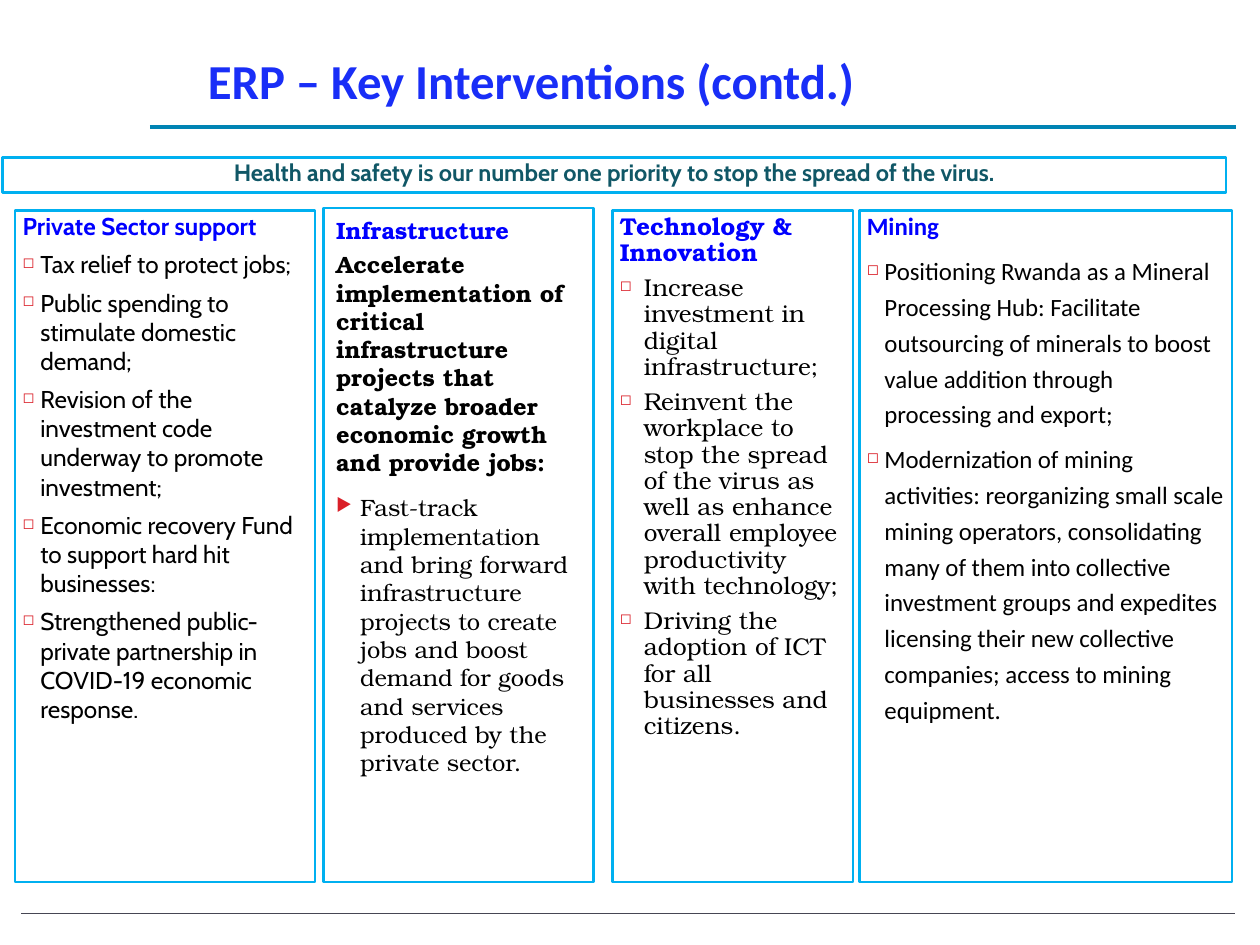
from lxml import etree
from pptx import Presentation
from pptx.dml.color import RGBColor
from pptx.enum.shapes import MSO_CONNECTOR, MSO_SHAPE
from pptx.enum.text import MSO_ANCHOR, PP_ALIGN
from pptx.oxml.ns import qn
from pptx.util import Pt

WHITE = RGBColor(0xFF, 0xFF, 0xFF)
BLACK = RGBColor(0x00, 0x00, 0x00)
GREY = RGBColor(0x46, 0x46, 0x53)
TEAL = RGBColor(0x00, 0x84, 0xB4)
DARK_TEAL = RGBColor(0x10, 0x57, 0x66)
SKY = RGBColor(0x00, 0xB0, 0xF0)
BLUE = RGBColor(0x00, 0x00, 0xFF)
TITLE_BLUE = RGBColor(0x19, 0x2E, 0xF7)
RED = RGBColor(0xDA, 0x1F, 0x28)

TOP, BOTTOM = 120.25, 504
SQUARE = ("◻", 60)
ARROW = ("▶", 76)


def set_values(target, values):
    for name, value in values.items():
        setattr(target, name, value)


def add_rule(s, x1, x2, y, color, width):
    line = s.shapes.add_connector(MSO_CONNECTOR.STRAIGHT, Pt(x1), Pt(y), Pt(x2), Pt(y))
    line.line.color.rgb = color
    line.line.width = Pt(width)
    etree.SubElement(line._element.spPr, qn("a:effectLst"))


def add_bullet(p, bullet, indent):
    char, percent = bullet
    pPr = p._p.get_or_add_pPr()
    pPr.set("marL", str(Pt(indent)))
    pPr.set("indent", str(-Pt(indent)))
    color = etree.SubElement(pPr, qn("a:buClr"))
    etree.SubElement(color, qn("a:srgbClr"), val=str(RED))
    etree.SubElement(pPr, qn("a:buSzPct"), val=str(percent * 1000))
    etree.SubElement(pPr, qn("a:buChar"), char=char)


def add_text(tf, index, text, font, para=None, bullet=None, indent=0):
    p = tf.add_paragraph() if index else tf.paragraphs[0]
    if bullet:
        add_bullet(p, bullet, indent)
    set_values(p, {"alignment": PP_ALIGN.LEFT, **(para or {})})
    r = p.add_run()
    r.text = text
    set_values(r.font, {k: v for k, v in font.items() if k != "color"})
    r.font.color.rgb = font["color"]


def set_frame(tf, left, top):
    set_values(tf, {"word_wrap": True, "vertical_anchor": MSO_ANCHOR.TOP,
                    "margin_left": Pt(left), "margin_right": Pt(left),
                    "margin_top": Pt(top), "margin_bottom": Pt(top)})


def add_box(s, x, y, w, h, insets=(4.32, 2.16)):
    sp = s.shapes.add_shape(MSO_SHAPE.RECTANGLE, Pt(x), Pt(y), Pt(w), Pt(h))
    sp.shadow.inherit = False
    sp.fill.solid()
    sp.fill.fore_color.rgb = WHITE
    sp.line.color.rgb = SKY
    sp.line.width = Pt(1.5)
    set_frame(sp.text_frame, *insets)
    return sp.text_frame


def add_column(s, x, w, font_name, size, heading, items, indent, spacing):
    tf = add_box(s, x, TOP, w, BOTTOM - TOP)
    font = {"name": font_name, "size": Pt(size), "bold": True, "color": BLUE}
    add_text(tf, 0, heading, font, {"line_spacing": 0.9})
    body = {**font, "bold": False, "color": BLACK}
    for i, item in enumerate(items, 1):
        add_text(tf, i, item, body,
                 {"line_spacing": spacing, "space_before": Pt(5.2)}, SQUARE, indent)


def add_infrastructure(s):
    tf = add_box(s, 185.04, 118.8, 154.08, BOTTOM - 118.8, (7.2, 4.5))
    font = {"name": "TeX Gyre Bonum", "size": Pt(13.5), "bold": True, "color": BLUE}
    add_text(tf, 0, "Infrastructure", font)
    add_text(tf, 1, "Accelerate implementation of critical infrastructure projects that "
             "catalyze broader economic growth and provide jobs:",
             {**font, "color": BLACK}, {"space_before": Pt(3.4), "space_after": Pt(3.4)})
    add_text(tf, 2, "Fast-track implementation and bring forward infrastructure projects to "
             "create jobs and boost demand for goods and services produced by the private sector.",
             {**font, "color": BLACK, "bold": False}, {"space_before": Pt(6)}, ARROW, 13.68)


def add_title(s):
    tf = s.shapes.add_textbox(Pt(106.56), Pt(23.76), Pt(465.84), Pt(36.72)).text_frame
    set_frame(tf, 12.25, 5)
    add_text(tf, 0, "ERP – Key Interventions (contd.)",
             {"name": "Calibri", "size": Pt(27.9), "bold": True, "color": TITLE_BLUE})


def main():
    prs = Presentation()
    prs.slide_width, prs.slide_height = Pt(720), Pt(540)
    s = prs.slides.add_slide(prs.slide_layouts[6])

    # Title and rules
    add_rule(s, 12.24, 705.6, 522, GREY, 0.75)
    add_rule(s, 85.68, 706.32, 72.72, TEAL, 2.25)
    add_title(s)

    # Banner
    tf = add_box(s, 1.44, 90, 699.12, 20.16)
    add_text(tf, 0, "Health and safety is our number one priority to stop the spread of the virus.",
             {"name": "Cabin", "size": Pt(13.5), "bold": True, "color": DARK_TEAL},
             {"alignment": PP_ALIGN.CENTER, "line_spacing": 0.9})

    # Four columns
    add_column(s, 8.64, 171.36, "Cabin", 13.9, "Private Sector support", [
        "Tax relief to protect jobs;",
        "Public spending to stimulate domestic demand;",
        "Revision of the investment code underway to promote investment;",
        "Economic recovery Fund to support hard hit businesses:",
        "Strengthened public-private partnership in COVID-19 economic response.",
    ], 10.08, 1.0)
    add_infrastructure(s)
    add_column(s, 349.92, 137.52, "TeX Gyre Bonum", 13.9, "Technology & Innovation", [
        "Increase investment in digital infrastructure;",
        "Reinvent the workplace to stop the spread of the virus as well as enhance "
        "overall employee productivity with technology;",
        "Driving the adoption of ICT for all businesses and citizens.",
    ], 13.68, 0.9)
    add_column(s, 491.04, 213.12, "Calibri", 14.2, "Mining", [
        "Positioning Rwanda as a Mineral Processing Hub: Facilitate outsourcing of minerals "
        "to boost value addition through processing and export;",
        "Modernization of mining activities: reorganizing small scale mining operators, "
        "consolidating many of them into collective investment groups and expedites licensing "
        "their new collective companies; access to mining equipment.",
    ], 10.08, 1.2)

    prs.save("out.pptx")


if __name__ == "__main__":
    main()
